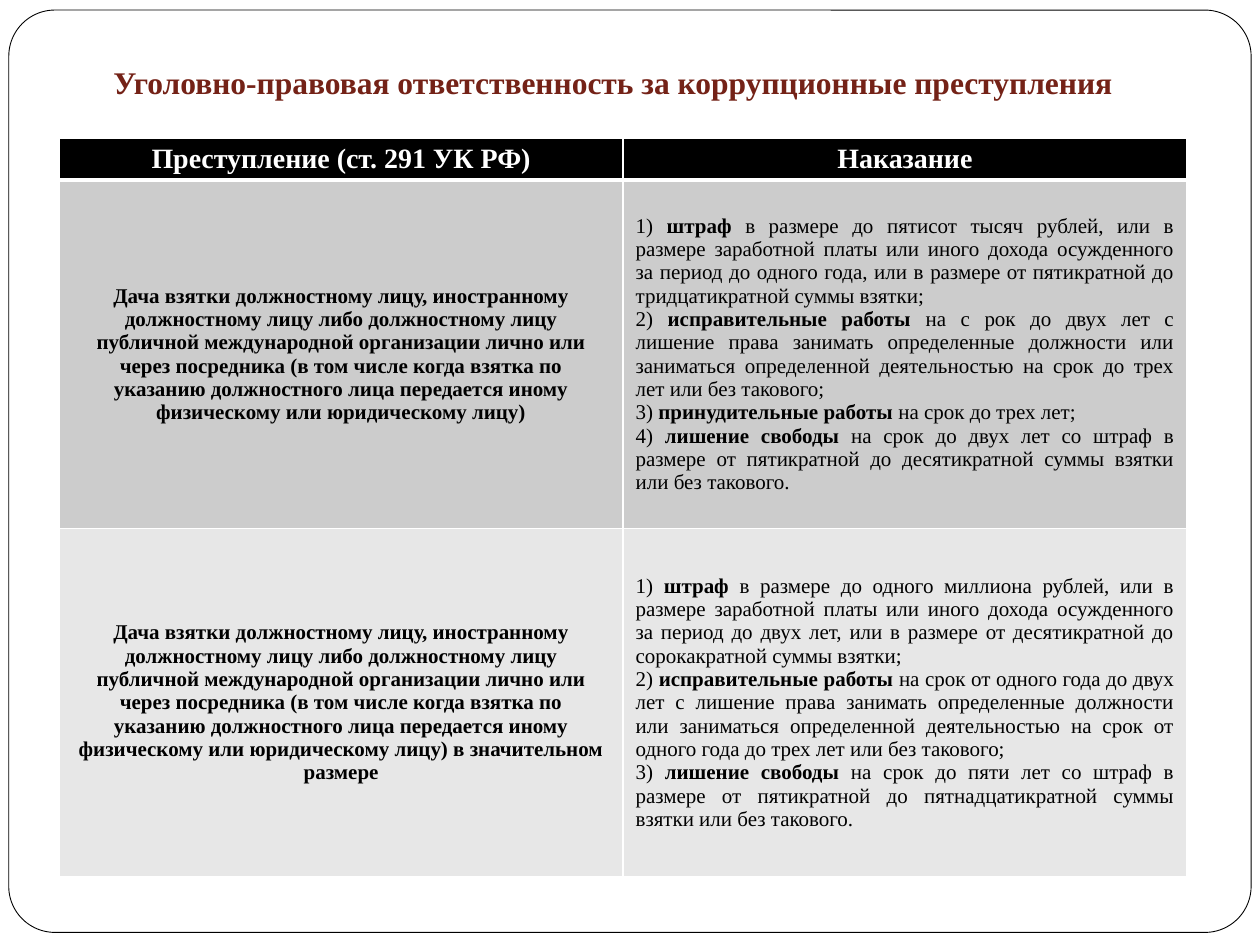
from lxml.etree import SubElement
from pptx import Presentation
from pptx.dml.color import RGBColor
from pptx.enum.shapes import MSO_SHAPE
from pptx.enum.text import MSO_ANCHOR, PP_ALIGN
from pptx.oxml.ns import qn
from pptx.util import Inches, Pt

BLACK = RGBColor(0x00, 0x00, 0x00)
WHITE = RGBColor(0xFF, 0xFF, 0xFF)
MAROON = RGBColor(0x74, 0x22, 0x17)
GRAY = RGBColor(0xCC, 0xCC, 0xCC)
PALE = RGBColor(0xE7, 0xE7, 0xE7)

FACE = "Times New Roman"
TITLE = {"name": FACE, "size": Pt(18), "bold": True}
HEAD = {"name": FACE, "size": Pt(16), "bold": True}
BOLD = {"name": FACE, "size": Pt(12), "bold": True}
PLAIN = {**BOLD, "bold": False}

CRIME = (
    "Дача взятки должностному лицу, иностранному должностному лицу либо "
    "должностному лицу публичной международной организации лично или через "
    "посредника (в том числе когда взятка по указанию должностного лица "
    "передается иному физическому или юридическому лицу)"
)
HEADS = ["Преступление (ст. 291 УК РФ)", "Наказание"]
ROWS = [
    (GRAY, CRIME, [
        ("штраф", " в размере до пятисот тысяч рублей, или в размере заработной "
         "платы или иного дохода осужденного за период до одного года, или в "
         "размере от пятикратной до тридцатикратной суммы взятки;"),
        ("исправительные работы ", "на с рок до двух лет с лишение права занимать "
         "определенные должности или заниматься определенной деятельностью на "
         "срок до трех лет или без такового;"),
        ("принудительные работы ", "на срок до трех лет;"),
        ("лишение свободы ", "на срок до двух лет со штраф в размере от "
         "пятикратной до десятикратной суммы взятки или без такового."),
    ]),
    (PALE, CRIME + " в значительном размере", [
        ("штраф", " в размере до одного миллиона рублей, или в размере заработной "
         "платы или иного дохода осужденного за период до двух лет, или в "
         "размере от десятикратной до сорокакратной суммы взятки;"),
        ("исправительные работы ", "на срок от одного года до двух лет с лишение "
         "права занимать определенные должности или заниматься определенной "
         "деятельностью на срок от одного года до трех лет или без такового;"),
        ("лишение свободы ", "на срок до пяти лет со штраф в размере от "
         "пятикратной до пятнадцатикратной суммы взятки или без такового."),
    ]),
]


def assign(item, values):
    for key, value in values.items():
        setattr(item, key, value)


def write(para, text, style, color=BLACK):
    run = para.add_run()
    run.text = text
    assign(run.font, style)
    run.font.color.rgb = color


def center(frame, text, style, color=BLACK):
    para = frame.paragraphs[0]
    para.alignment = PP_ALIGN.CENTER
    write(para, text, style, color)


def listing(frame, items):
    for num, (term, rest) in enumerate(items, 1):
        para = frame.paragraphs[0] if num == 1 else frame.add_paragraph()
        para.alignment = PP_ALIGN.JUSTIFY
        write(para, f"{num}) ", PLAIN)
        write(para, term, BOLD)
        write(para, rest, PLAIN)


def edge(cell, widths):
    props = cell._tc.get_or_add_tcPr()
    for side, width in zip("LRTB", widths):
        line = SubElement(props, qn(f"a:ln{side}"), w=str(Pt(width)))
        fill = SubElement(line, qn("a:solidFill"))
        SubElement(fill, qn("a:srgbClr"), val=str(WHITE))


def paint(cell, color, widths):
    edge(cell, widths)
    cell.fill.solid()
    cell.fill.fore_color.rgb = color
    assign(cell, {
        "vertical_anchor": MSO_ANCHOR.MIDDLE,
        "margin_left": Inches(0.1), "margin_right": Inches(0.1),
        "margin_top": Inches(0.03), "margin_bottom": Inches(0.03),
    })


def frame(slide, box):
    shape = slide.shapes.add_shape(MSO_SHAPE.ROUNDED_RECTANGLE, *box)
    shape.adjustments[0] = 0.05
    shape.shadow.inherit = False
    shape.fill.solid()
    shape.fill.fore_color.rgb = WHITE
    shape.line.color.rgb = BLACK
    shape.line.width = Pt(0.5)


def heading(slide, box):
    text = slide.shapes.add_textbox(*box).text_frame
    assign(text, {
        "word_wrap": True, "vertical_anchor": MSO_ANCHOR.BOTTOM,
        "margin_left": Inches(0.1), "margin_right": Inches(0.1),
        "margin_top": Inches(0.05), "margin_bottom": Inches(0.1),
    })
    center(text, "Уголовно-правовая ответственность за коррупционные преступления",
           TITLE, MAROON)


def grid(slide, box):
    left, top, width, height = box
    table = slide.shapes.add_table(len(ROWS) + 1, len(HEADS), *box).table
    first = Inches(0.33)
    for col in table.columns:
        col.width = width // len(HEADS)
    for row in table.rows:
        row.height = (height - first) // len(ROWS)
    table.rows[0].height = first

    for col, text in enumerate(HEADS):
        cell = table.cell(0, col)
        paint(cell, BLACK, (1, 1, 1, 3))
        center(cell.text_frame, text, HEAD, WHITE)
    for row, (color, crime, items) in enumerate(ROWS, 1):
        act, term = table.cell(row, 0), table.cell(row, 1)
        for cell in (act, term):
            paint(cell, color, (1, 1, 3 if row == 1 else 1, 1))
        center(act.text_frame, crime, BOLD)
        listing(term.text_frame, items)


def main():
    deck = Presentation()
    deck.slide_width, deck.slide_height = Inches(10), Inches(7.5)
    slide = deck.slides.add_slide(deck.slide_layouts[6])
    for part, box in (
        (frame, (0.07, 0.08, 9.86, 7.32)),
        (grid, (0.47, 1.1, 8.95, 5.86)),
        (heading, (0.39, 0.39, 8.95, 0.51)),
    ):
        part(slide, [Inches(size) for size in box])
    deck.save("out.pptx")


if __name__ == "__main__":
    main()
